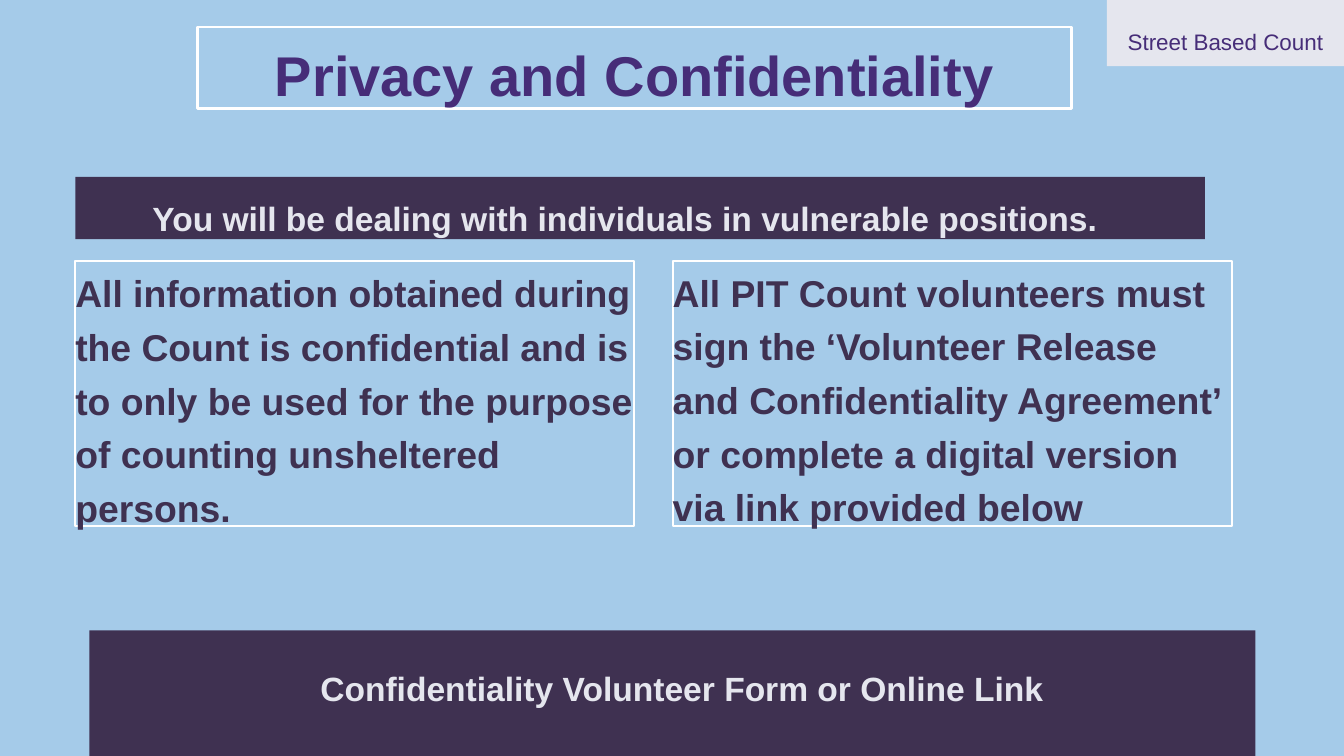
from pptx import Presentation
from pptx.dml.color import RGBColor
from pptx.enum.shapes import MSO_SHAPE
from pptx.enum.text import MSO_ANCHOR, MSO_AUTO_SIZE, PP_ALIGN
from pptx.util import Inches, Pt
from lxml import etree

RECT = MSO_SHAPE.RECTANGLE
TOP = MSO_ANCHOR.TOP
FIT = MSO_AUTO_SIZE.SHAPE_TO_FIT_TEXT
LEFT, MID = PP_ALIGN.LEFT, PP_ALIGN.CENTER
THEME = {
    "font": "Arial",
    "sky": RGBColor.from_string("A5CBE9"),
    "plum": RGBColor.from_string("3F3151"),
    "violet": RGBColor.from_string("462D78"),
    "pale": RGBColor.from_string("E5E6EE"),
    "white": RGBColor.from_string("FFFFFF"),
    "title": Pt(60), "body": Pt(40), "band": Pt(36), "tag": Pt(24),
}

deck = Presentation()
deck.slide_width, deck.slide_height = Inches(20), Inches(11.25)
slide = deck.slides.add_slide(deck.slide_layouts[3])
slide.background.fill.solid()
slide.background.fill.fore_color.rgb = THEME["sky"]


def area(x, y, w, h):
    wide, high = deck.slide_width / 100, deck.slide_height / 100
    return int(x * wide), int(y * high), int(w * wide), int(h * high)


def write(shape, box, text, size, ink, align=MID, bold=True):
    shape.left, shape.top, shape.width, shape.height = area(*box)
    frame = shape.text_frame
    frame.word_wrap, frame.auto_size, frame.vertical_anchor = True, FIT, TOP
    frame.margin_left = frame.margin_right = 0
    frame.margin_top = frame.margin_bottom = 0
    para = frame.paragraphs[0]
    para.alignment, para.line_spacing = align, 1.2
    para.space_before = para.space_after = Pt(0)
    run = para.add_run()
    run.text = text
    run.font.name, run.font.bold = THEME["font"], bold
    run.font.size, run.font.color.rgb = THEME[size], THEME[ink]
    return para


title, *cols = slide.placeholders
write(title, (14.7, 3.56, 65, 10.76), "Privacy and Confidentiality", "title", "violet")
title.line.color.rgb, title.line.width = THEME["white"], Pt(3)

notes = [
    (5.6, 34.58, "All information obtained during the Count is confidential and is "
     "to only be used for the purpose of counting unsheltered persons."),
    (50.05, 34.49, "All PIT Count volunteers must sign the ‘Volunteer Release and "
     "Confidentiality Agreement’ or complete a digital version via link provided below"),
]
for col, (x, y, text) in zip(cols, notes):
    para = write(col, (x, y, 41.6, 35.91), text, "body", "plum", LEFT)
    props = para._p.get_or_add_pPr()
    props.set("marL", "0")
    props.set("indent", "0")
    etree.SubElement(props, "{http://schemas.openxmlformats.org/drawingml/2006/main}buNone")
    col.line.color.rgb, col.line.width = THEME["white"], Pt(2.25)

bars = [
    ((5.6, 23.38, 84.05, 8.27), "plum", (4.65, 25.07, 84.45, 6.49),
     "You will be dealing with individuals in vulnerable positions. ", "band", "pale", True),
    ((6.65, 83.38, 86.75, 20.71), "plum", (8.8, 87.29, 84.6, 5.42),
     "Confidentiality Volunteer Form or Online Link ", "band", "pale", True),
    ((82.35, -0.62, 17.65, 9.38), "pale", (82.35, 3.02, 17.65, 3.56),
     "Street Based Count", "tag", "violet", False),
]
for box, fill, spot, text, size, ink, bold in bars:
    bar = slide.shapes.add_shape(RECT, *area(*box))
    bar.shadow.inherit = False
    bar.fill.solid()
    bar.fill.fore_color.rgb = THEME[fill]
    bar.line.fill.background()
    label = slide.shapes.add_textbox(*area(*spot))
    write(label, spot, text, size, ink, bold=bold)

deck.save("out.pptx")
